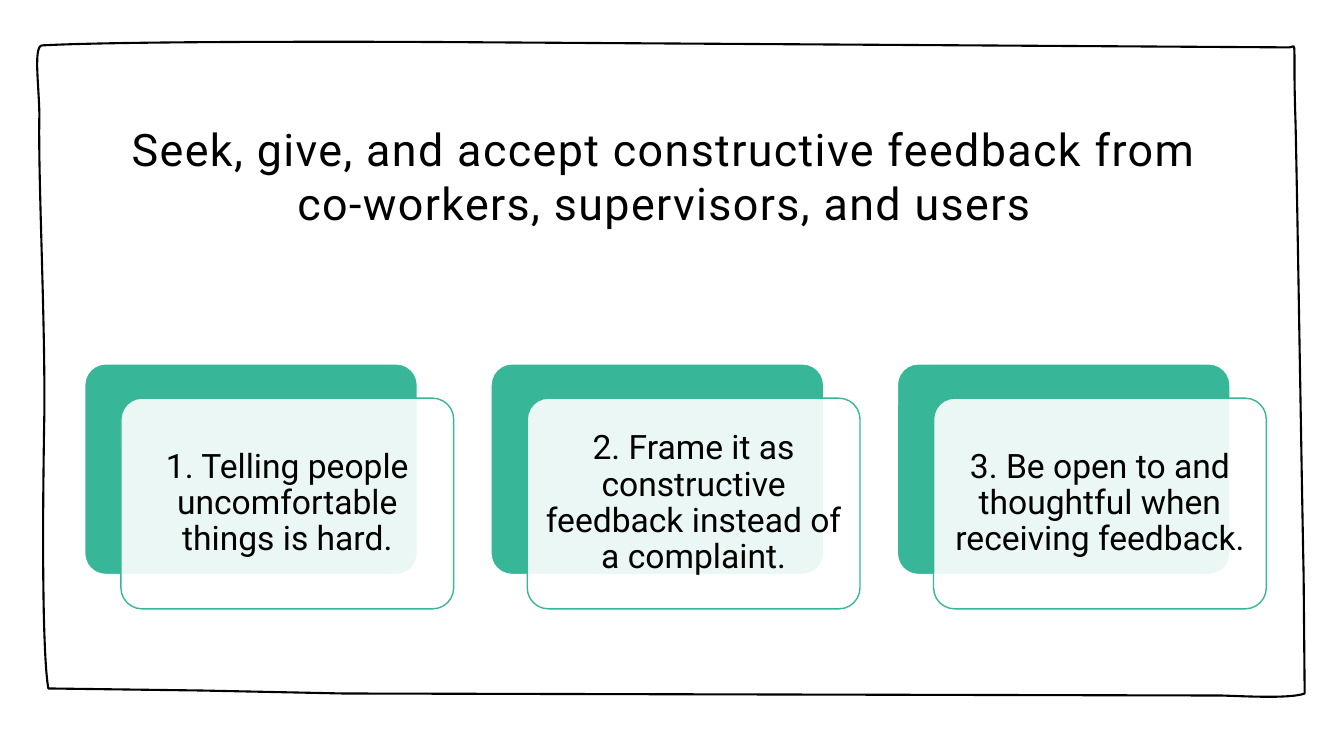
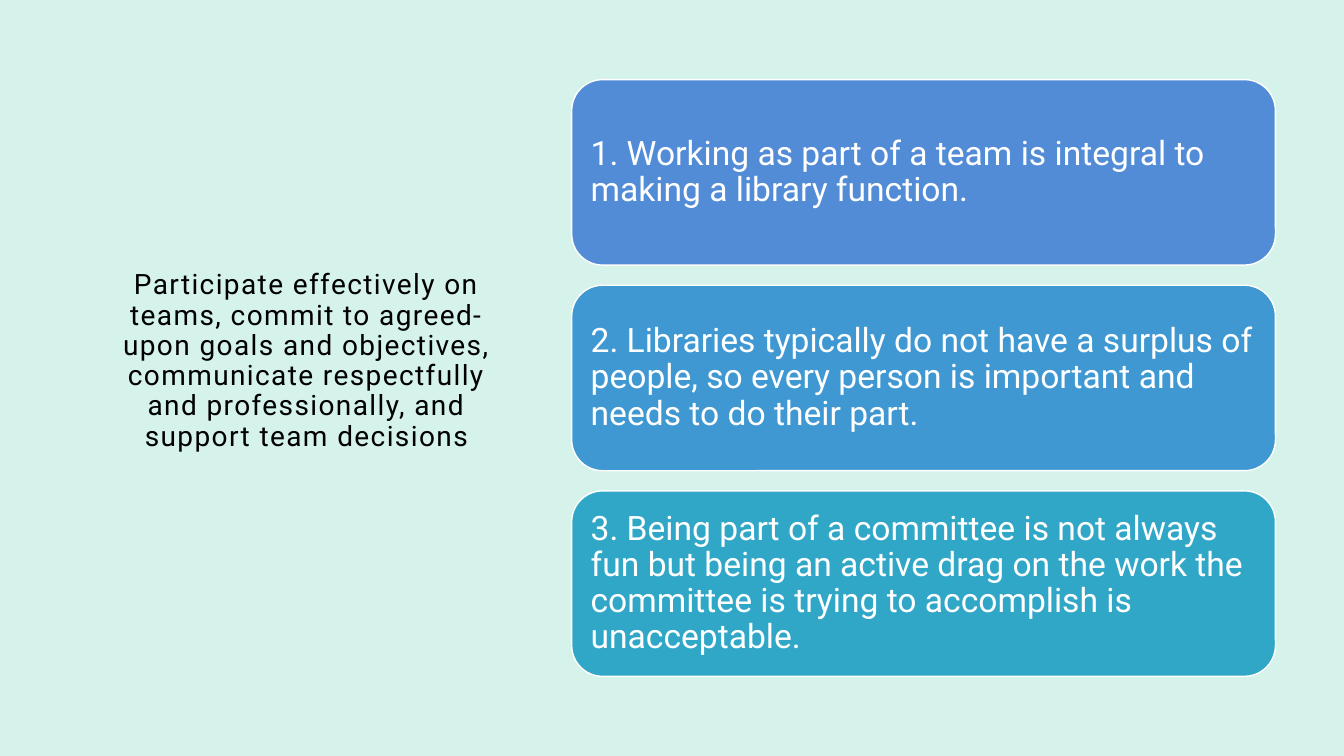
from dataclasses import dataclass

from lxml import etree
from pptx import Presentation
from pptx.dml.color import RGBColor
from pptx.enum.shapes import MSO_SHAPE as SHAPE
from pptx.enum.text import MSO_ANCHOR as ANCHOR, PP_ALIGN as ALIGN
from pptx.oxml.ns import qn
from pptx.util import Inches, Pt


@dataclass(frozen=True)
class Theme:
    font: str = "Roboto"
    black: str = "000000"
    white: str = "FFFFFF"
    mint: str = "D5F2EB"
    green: str = "38B698"
    blocks: tuple = ("528BD6", "3F98D1", "31A7C7")
    title_size: int = 32
    side_title_size: int = 20
    body_size: int = 24
    title_tracking: int = 100  # hundredths of a point
    body_spacing: float = 0.9
    inset: float = 0.1


# Hand-drawn frame: two numbers are a line, six are a cubic curve
FRAME_START = (12.94, 6.88)
FRAME_SEGMENTS = (
    (12.81, 6.93, 12.39, 6.91, 12.12, 6.9),
    (3.41, 6.88),
    (1.98, 6.85),
    (0.48, 6.83),
    (0.42, 6.51, 0.42, 5.21, 0.44, 4.13),
    (0.45, 3.2, 0.38, 1.8, 0.39, 1.19),
    (0.4, 0.94, 0.32, 0.45, 0.42, 0.45),
    (1.18, 0.41, 3.41, 0.41, 4.85, 0.42),
    (12.79, 0.47),
    (12.87, 0.46, 12.82, 0.35, 12.85, 1.23),
    (12.87, 2.1, 12.91, 4.76, 12.93, 5.71),
)


def curve_points(start, segment, steps=16):
    """Points along a cubic curve, after its start."""
    c1, c2, end = segment[:2], segment[2:4], segment[4:]
    for i in range(1, steps + 1):
        t = i / steps
        u = 1 - t
        yield tuple(
            u**3 * a + 3 * u * u * t * b + 3 * u * t * t * c + t**3 * d
            for a, b, c, d in zip(start, c1, c2, end)
        )


class Deck:
    def __init__(self, theme):
        self.theme = theme
        self.prs = Presentation()
        self.prs.slide_width, self.prs.slide_height = Inches(13.33), Inches(7.5)
        self.slide = None

    def new_slide(self, background):
        self.slide = self.prs.slides.add_slide(self.prs.slide_layouts[6])
        fill = self.slide.background.fill
        fill.solid()
        fill.fore_color.rgb = RGBColor.from_string(background)

    def set_text(self, sp, text, size, color, align, spacing=1.0):
        tf = sp.text_frame
        tf.word_wrap = True
        tf.vertical_anchor = ANCHOR.MIDDLE
        tf.margin_left = tf.margin_right = Inches(self.theme.inset)
        p = tf.paragraphs[0]
        p.text = text
        p.alignment = align
        p.line_spacing = spacing
        p.font.name = self.theme.font
        p.font.size = Pt(size)
        p.font.color.rgb = RGBColor.from_string(color)
        return p

    def title(self, box, text, size, spacing=1.0):
        sp = self.slide.shapes.add_textbox(*map(Inches, box))
        p = self.set_text(sp, text, size, self.theme.black, ALIGN.CENTER, spacing)
        for r in p.runs:
            r._r.get_or_add_rPr().set("spc", str(self.theme.title_tracking))

    def rounded(self, box, fill, line, radius=None, opacity=None):
        sp = self.slide.shapes.add_shape(SHAPE.ROUNDED_RECTANGLE, *map(Inches, box))
        sp.shadow.inherit = False
        if radius is not None:
            sp.adjustments[0] = radius
        sp.fill.solid()
        sp.fill.fore_color.rgb = RGBColor.from_string(fill)
        if opacity is not None:
            color = sp._element.spPr.find(qn("a:solidFill"))[0]
            etree.SubElement(color, qn("a:alpha")).set("val", str(opacity * 1000))
        sp.line.color.rgb = RGBColor.from_string(line)
        sp.line.width = Pt(1)
        return sp

    def body(self, sp, text, color, align):
        th = self.theme
        self.set_text(sp, text, th.body_size, color, align, th.body_spacing)

    def card(self, left, top, text):
        """Translucent text card laid over a solid one."""
        th, width, height = self.theme, 3.3, 2.09
        self.rounded((left, top, width, height), th.green, th.white, 0.1)
        front = (left + 0.36, top + 0.34, width, height)
        sp = self.rounded(front, th.white, th.green, 0.1, opacity=90)
        self.body(sp, text, th.black, ALIGN.CENTER)

    def block(self, box, fill, text):
        sp = self.rounded(box, fill, self.theme.white)
        self.body(sp, text, self.theme.white, ALIGN.LEFT)

    def frame(self):
        points = [FRAME_START]
        for segment in FRAME_SEGMENTS:
            if len(segment) == 2:
                points.append(segment)
            else:
                points.extend(curve_points(points[-1], segment))
        start, *rest = [(Inches(x), Inches(y)) for x, y in points]
        builder = self.slide.shapes.build_freeform(*start)
        builder.add_line_segments(rest, close=True)
        sp = builder.convert_to_shape()
        sp.shadow.inherit = False
        sp.fill.background()
        sp.line.color.rgb = RGBColor.from_string(self.theme.black)
        sp.line.width = Pt(1.5)


def feedback_slide(deck):
    deck.new_slide(deck.theme.white)
    deck.frame()
    deck.title(
        (1.12, 0.8, 10.94, 1.89),
        "Seek, give, and accept constructive feedback from co-workers, "
        "supervisors, and users",
        deck.theme.title_size,
    )
    # Row of cards
    cards = (
        "1. Telling people uncomfortable things is hard.",
        "2. Frame it as constructive feedback instead of a complaint.",
        "3. Be open to and thoughtful when receiving feedback.",
    )
    for i, text in enumerate(cards):
        deck.card(0.84 + 4.03 * i, 3.61, text)


def teamwork_slide(deck):
    deck.new_slide(deck.theme.mint)
    deck.title(
        (0.97, 0.9, 4.14, 5.37),
        "Participate effectively on teams, commit to agreed-upon goals and "
        "objectives, communicate respectfully and professionally, and "
        "support team decisions",
        deck.theme.side_title_size,
        deck.theme.body_spacing,
    )
    # Stack of blocks
    blocks = (
        "1. Working as part of a team is integral to making a library function.",
        "2. Libraries typically do not have a surplus of people, so every person "
        "is important and needs to do their part.",
        "3. Being part of a committee is not always fun but being an active drag "
        "on the work the committee is trying to accomplish is unacceptable.",
    )
    for i, (fill, text) in enumerate(zip(deck.theme.blocks, blocks)):
        deck.block((5.67, 0.79 + 2.04 * i, 6.98, 1.84), fill, text)


def main():
    deck = Deck(Theme())
    feedback_slide(deck)
    teamwork_slide(deck)
    deck.prs.save("out.pptx")


if __name__ == "__main__":
    main()
